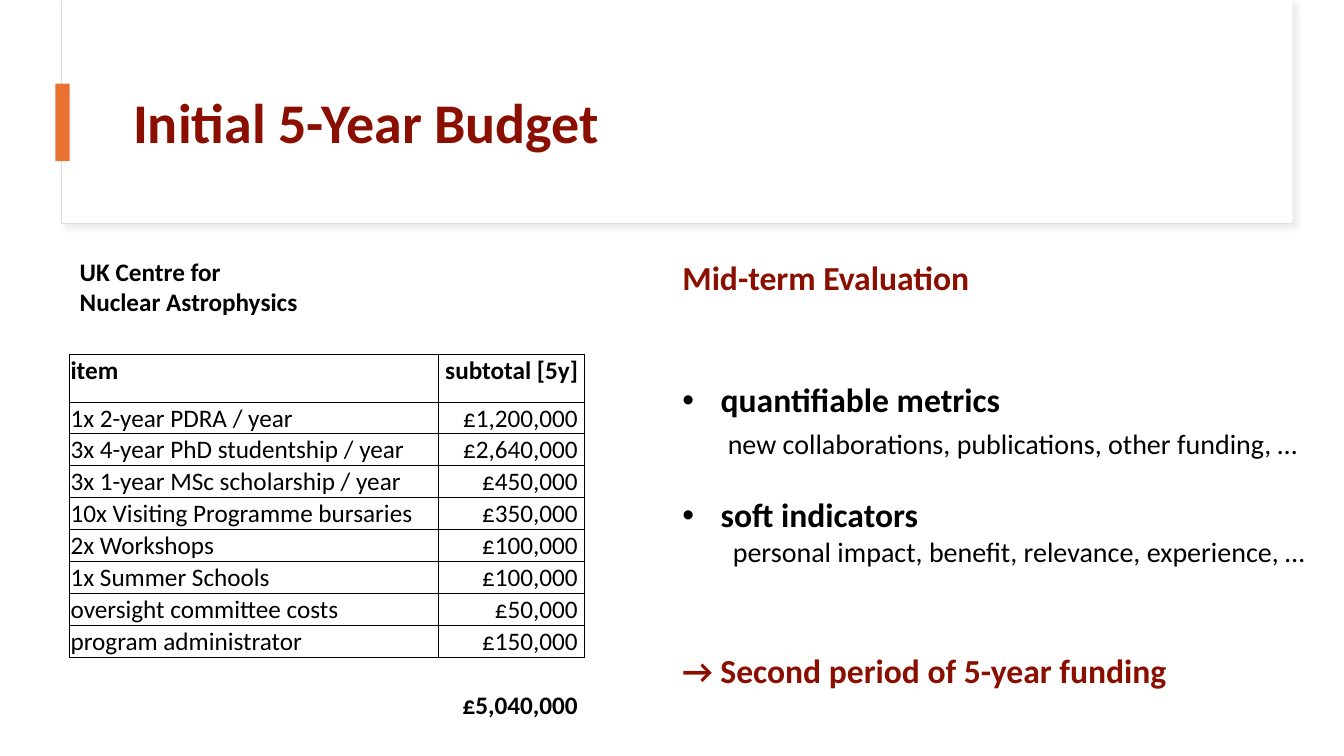
import pptx
import pptx.util
import pptx.dml.color
import pptx.enum.shapes
import pptx.enum.text
import pptx.oxml
import pptx.oxml.ns
from lxml import etree

Inches = pptx.util.Inches
Pt = pptx.util.Pt
RGBColor = pptx.dml.color.RGBColor
ALIGN = pptx.enum.text.PP_ALIGN
ANCHOR = pptx.enum.text.MSO_ANCHOR
qn = pptx.oxml.ns.qn

RED = RGBColor(0x8A, 0x0F, 0x00)
BLACK = RGBColor(0, 0, 0)
WHITE = RGBColor(0xFF, 0xFF, 0xFF)
GRAY = RGBColor(0xDE, 0xDE, 0xDE)
SHADOW = RGBColor(0xD9, 0xD9, 0xD9)
ORANGE = RGBColor(0xE9, 0x71, 0x32)
FONT = "Calibri"

TITLE = "Initial 5-Year Budget"
CENTRE_NAME = ["UK Centre for", "Nuclear Astrophysics"]
HEADINGS = ("item", "subtotal [5y]")
BUDGET = [
    ("1x 2-year PDRA / year", "£1,200,000"),
    ("3x 4-year PhD studentship / year", "£2,640,000"),
    ("3x 1-year MSc scholarship / year", "£450,000"),
    ("10x Visiting Programme bursaries", "£350,000"),
    ("2x Workshops", "£100,000"),
    ("1x Summer Schools", "£100,000"),
    ("oversight committee costs", "£50,000"),
    ("program administrator", "£150,000"),
]
TOTAL = "£5,040,000"
HEADING = {"size": Pt(24), "bold": True, "color": RED}
POINT = {"size": Pt(24), "bold": True, "color": BLACK}
DETAIL = {"size": Pt(20), "bold": False, "color": BLACK}
EVALUATION = [
    ("Mid-term Evaluation", HEADING, 0, 0, False),
    ("quantifiable metrics", POINT, 58.6, 0.38, True),
    ("new collaborations, publications, other funding, …", DETAIL, 4.9, 0.45, False),
    ("soft indicators", POINT, 24.4, 0.38, True),
    ("personal impact, benefit, relevance, experience, …", DETAIL, 0, 0.5, False),
    ("→ Second period of 5-year funding", HEADING, 58.6, 0, False),
]

COLUMN_WIDTHS = (3.66, 1.45)
ROW_HEIGHT = 0.317
HEADER_ROW = 2
LAST_ITEM_ROW = HEADER_ROW + len(BUDGET)
ROWS = (
    [("\n".join(CENTRE_NAME), ""), ("", ""), HEADINGS]
    + BUDGET
    + [("", ""), ("", TOTAL)]
)
ROW_HEIGHTS = {0: 0.7, HEADER_ROW: 0.47}


def set_values(target, values):
    for name, value in values.items():
        setattr(target, name, value)


def format_font(font, size, bold, color):
    set_values(font, {"name": FONT, "size": size, "bold": bold})
    font.color.rgb = color


def add_rectangle(slide, box, fill, line=None):
    shape = slide.shapes.add_shape(
        pptx.enum.shapes.MSO_SHAPE.RECTANGLE, *map(Inches, box)
    )
    shape.shadow.inherit = False
    shape.fill.solid()
    shape.fill.fore_color.rgb = fill
    if line is None:
        shape.line.fill.background()
    else:
        shape.line.color.rgb = line
        shape.line.width = Pt(0.75)
    return shape


def add_shadow(shape):
    effects = shape._element.spPr.find(qn("a:effectLst"))
    shadow = etree.SubElement(
        effects, qn("a:outerShdw"), blurRad=str(Pt(4)), dist=str(Pt(3)),
        dir=str(45 * 60000), algn="tl", rotWithShape="0",
    )
    color = etree.SubElement(shadow, qn("a:srgbClr"), val=str(SHADOW))
    etree.SubElement(color, qn("a:alpha"), val="50000")


def set_borders(cell, row):
    sides = {
        "L": HEADER_ROW <= row <= LAST_ITEM_ROW,
        "R": HEADER_ROW <= row <= LAST_ITEM_ROW,
        "T": HEADER_ROW <= row <= LAST_ITEM_ROW + 1,
        "B": HEADER_ROW - 1 <= row <= LAST_ITEM_ROW,
    }
    properties = cell._tc.get_or_add_tcPr()
    for position, (side, visible) in enumerate(sides.items()):
        line = etree.Element(qn("a:ln" + side), w=str(Pt(0.5)))
        if visible:
            fill = etree.SubElement(line, qn("a:solidFill"))
            etree.SubElement(fill, qn("a:srgbClr"), val=str(BLACK))
        else:
            etree.SubElement(line, qn("a:noFill"))
        properties.insert(position, line)


def fill_cell(cell, row, column, text):
    cell.fill.background()
    set_borders(cell, row)
    is_header = row == HEADER_ROW
    is_amount = column == 1 and not is_header
    margins = {
        "margin_left": Inches(0.01),
        "margin_right": Inches(0.07 if is_amount else 0.01),
        "margin_top": Inches(0.01),
        "margin_bottom": 0,
        "vertical_anchor": ANCHOR.TOP if is_header else ANCHOR.BOTTOM,
    }
    if row == 0:
        margins.update(
            margin_left=Inches(0.1), margin_top=Inches(0.05),
            vertical_anchor=ANCHOR.TOP,
        )
    set_values(cell, margins)
    cell.text = text
    bold = not HEADER_ROW < row <= LAST_ITEM_ROW
    for paragraph in cell.text_frame.paragraphs:
        if column == 1:
            paragraph.alignment = ALIGN.CENTER if is_header else ALIGN.RIGHT
        for run in paragraph.runs:
            format_font(run.font, Pt(18), bold, BLACK)


def add_budget(slide):
    heights = [ROW_HEIGHTS.get(row, ROW_HEIGHT) for row in range(len(ROWS))]
    table = slide.shapes.add_table(
        len(ROWS), len(COLUMN_WIDTHS), Inches(0.69), Inches(2.5),
        Inches(sum(COLUMN_WIDTHS)), Inches(sum(heights)),
    ).table
    set_values(table, {"first_row": False, "horz_banding": False})
    for column, width in enumerate(COLUMN_WIDTHS):
        table.columns[column].width = Inches(width)
    for row, texts in enumerate(ROWS):
        table.rows[row].height = Inches(heights[row])
        for column, text in enumerate(texts):
            fill_cell(table.cell(row, column), row, column, text)


def add_evaluation(slide):
    frame = slide.shapes.add_textbox(*map(Inches, (6.67, 2.5, 6.67, 4.41))).text_frame
    frame.word_wrap = True
    for index, (text, style, before, indent, bullet) in enumerate(EVALUATION):
        paragraph = frame.add_paragraph() if index else frame.paragraphs[0]
        paragraph.space_before = Pt(before)
        run = paragraph.add_run()
        run.text = text
        format_font(run.font, **style)
        properties = paragraph._p.get_or_add_pPr()
        properties.set("marL", str(Inches(indent)))
        properties.set("indent", str(-Inches(indent) if bullet else 0))
        if bullet:
            etree.SubElement(properties, qn("a:buFont"), typeface="Arial")
            etree.SubElement(properties, qn("a:buChar"), char="•")


def add_title(slide):
    title = slide.shapes.title
    box = dict(zip(("left", "top", "width", "height"), map(Inches, (1.22, 0.6, 11.12, 1.29))))
    set_values(title, box)
    frame = title.text_frame
    frame.text = TITLE
    set_values(frame, {
        "word_wrap": True,
        "vertical_anchor": ANCHOR.MIDDLE,
        "auto_size": pptx.enum.text.MSO_AUTO_SIZE.NONE,
    })
    paragraph = frame.paragraphs[0]
    set_values(paragraph, {"alignment": ALIGN.LEFT, "line_spacing": 0.9})
    format_font(paragraph.runs[0].font, Pt(40), True, RED)
    slide.shapes._spTree.append(title._element)


def main():
    presentation = pptx.Presentation()
    set_values(presentation, {"slide_width": Inches(13.33), "slide_height": Inches(7.5)})
    slide = presentation.slides.add_slide(presentation.slide_layouts[5])
    add_shadow(add_rectangle(slide, (0.61, 0.01, 12.21, 2.21), WHITE, GRAY))
    add_rectangle(slide, (0.62, 0, 12.2, 2.2), WHITE)
    add_title(slide)
    add_rectangle(slide, (0.55, 0.83, 0.14, 0.77), ORANGE)
    add_budget(slide)
    add_evaluation(slide)
    presentation.save("out.pptx")


if __name__ == "__main__":
    main()
